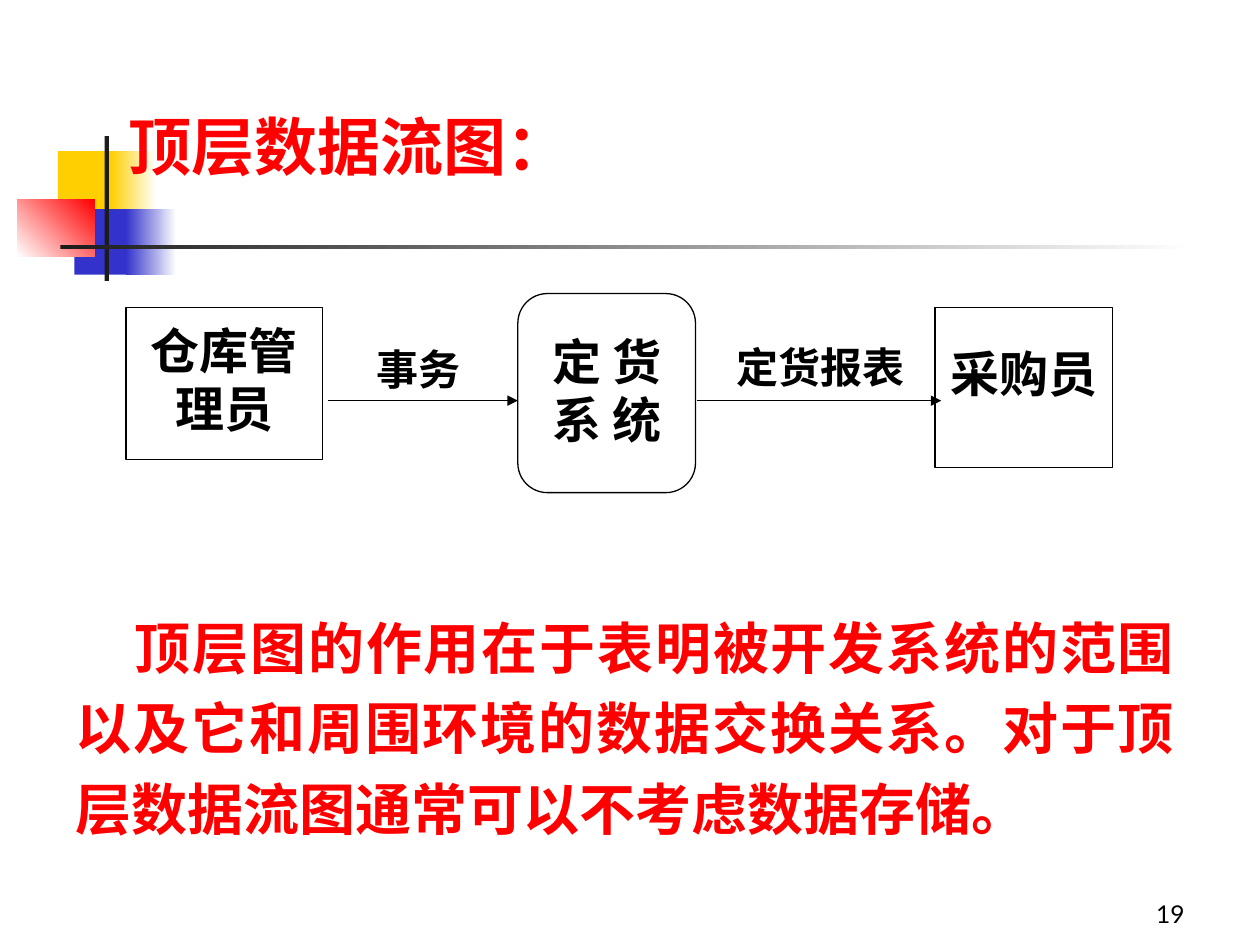
"""Build the top-level data flow diagram slide on a grid of 100 columns by 75 rows."""
from dataclasses import dataclass, field
from typing import Optional

import pptx
import pptx.dml.color
import pptx.enum.dml
import pptx.enum.shapes
import pptx.enum.text
import pptx.oxml.ns
import pptx.util
from lxml import etree

COLS, ROWS = 100, 75
COLORS = {
    "yellow": "FFCF01", "blue": "3333CC", "red": "FF0000",
    "dark": "1C1C1C", "black": "000000", "white": "FFFFFF",
}
CJK = "Noto Sans CJK SC"
ALIGN = pptx.enum.text.PP_ALIGN
ANCHOR = pptx.enum.text.MSO_ANCHOR
SHAPE = pptx.enum.shapes.MSO_SHAPE

prs = pptx.Presentation()
prs.slide_width = pptx.util.Inches(10)
prs.slide_height = pptx.util.Inches(7.5)
CELL = prs.slide_width / COLS


@dataclass(frozen=True)
class Area:
    col: float
    row: float
    cols: float
    rows: float

    def emu(self) -> list[int]:
        return [round(v * CELL) for v in (self.col, self.row, self.cols, self.rows)]


@dataclass(frozen=True)
class Block:
    area: Area
    start: str
    end: Optional[str] = None
    angle: float = 0


@dataclass(frozen=True)
class Node:
    area: Area
    text: str
    top: float
    shape: int = SHAPE.RECTANGLE


@dataclass(frozen=True)
class Label:
    area: Area
    text: str
    style: dict = field(default_factory=dict)


@dataclass(frozen=True)
class Flow:
    start: float
    end: float
    row: float


def rgb(name: str) -> pptx.dml.color.RGBColor:
    return pptx.dml.color.RGBColor.from_string(COLORS[name])


def write(sp, text: str, *, size: float = 24, color: str = "black", bold: bool = True,
          font: str = CJK, align=ALIGN.JUSTIFY, anchor=ANCHOR.TOP, top: float = 0.8,
          spacing: float = 1.2, indent: float = 0) -> None:
    tf = sp.text_frame
    tf.word_wrap = True
    tf.vertical_anchor = anchor
    tf.margin_top = round(top * CELL)
    p = tf.paragraphs[0]
    p.alignment = align
    p.line_spacing = pptx.util.Pt(round(size * spacing, 1))
    p._p.get_or_add_pPr().set("indent", str(round(indent * CELL)))
    r = p.add_run()
    r.text = text
    r.font.size = pptx.util.Pt(size)
    r.font.bold = bold
    r.font.name = font
    r.font.color.rgb = rgb(color)
    etree.SubElement(r._r.get_or_add_rPr(), pptx.oxml.ns.qn("a:ea"), typeface=font)


def draw_block(s, block: Block) -> None:
    sp = s.shapes.add_shape(SHAPE.RECTANGLE, *block.area.emu())
    sp.shadow.inherit = False
    sp.line.fill.background()
    if block.end is None:
        sp.fill.solid()
        sp.fill.fore_color.rgb = rgb(block.start)
        return
    sp.fill.gradient()
    sp.fill.gradient_angle = block.angle
    for stop, name, position in zip(sp.fill.gradient_stops, (block.start, block.end), (0, 1)):
        stop.color.rgb = rgb(name)
        stop.position = position


def draw_node(s, node: Node) -> None:
    sp = s.shapes.add_shape(node.shape, *node.area.emu())
    sp.shadow.inherit = False
    sp.fill.background()
    sp.line.color.rgb = rgb("black")
    sp.line.width = pptx.util.Pt(0.75)
    write(sp, node.text, size=28, align=ALIGN.CENTER, top=node.top)


def draw_label(s, label: Label) -> None:
    write(s.shapes.add_textbox(*label.area.emu()), label.text, **label.style)


def draw_flow(s, flow: Flow) -> None:
    ends = [round(v * CELL) for v in (flow.start, flow.row, flow.end, flow.row)]
    line = s.shapes.add_connector(pptx.enum.shapes.MSO_CONNECTOR.STRAIGHT, *ends)
    line.line.color.rgb = rgb("black")
    line.line.width = pptx.util.Pt(0.75)
    qn = pptx.oxml.ns.qn
    etree.SubElement(line.line._get_or_add_ln(), qn("a:tailEnd"), type="triangle")
    etree.SubElement(line._element.spPr, qn("a:effectLst"))


BLOCKS = [
    Block(Area(4.6, 12, 4.8, 5.2), "yellow"),
    Block(Area(8.8, 12, 3.6, 5.2), "yellow", "white"),
    Block(Area(5.9, 16.6, 4.6, 5.2), "blue"),
    Block(Area(10, 16.6, 4, 5.2), "blue", "white"),
    Block(Area(1.4, 15.8, 6.1, 4.6), "white", "red", 45),
    Block(Area(8.3, 10.8, 0.35, 11.5), "dark"),
    Block(Area(4.8, 19.45, 90, 0.35), "dark", "white"),
]
NODES = [
    Node(Area(41.1, 23.3, 14.1, 15.8), "定 货系 统", 2.3, SHAPE.FLOWCHART_ALTERNATE_PROCESS),
    Node(Area(10, 24.4, 15.6, 12.1), "仓库管理员", 1),
    Node(Area(74.2, 24.4, 14.1, 12.7), "采购员", 2.9),
]
FLOWS = [Flow(26, 41.1, 31.8), Flow(55.3, 74.7, 31.8)]
LABELS = [
    Label(Area(9.2, 7.5, 52.5, 7), "顶层数据流图：", dict(size=36, color="red", top=1)),
    Label(Area(56.2, 26.3, 17.9, 6.2), "定货报表", dict(align=ALIGN.CENTER)),
    Label(Area(28.9, 26.5, 12.7, 5.2), "事务"),
    Label(Area(5, 46.7, 89.2, 20.2),
          "顶层图的作用在于表明被开发系统的范围以及它和周围环境的数据交换关系。"
          "对于顶层数据流图通常可以不考虑数据存储。",
          dict(size=32, color="red", spacing=1.44, indent=4.7, top=0.9)),
    Label(Area(74.2, 69.2, 20.8, 5), "19",
          dict(size=14, bold=False, font="Lato", align=ALIGN.RIGHT, anchor=ANCHOR.BOTTOM)),
]


def main() -> None:
    s = prs.slides.add_slide(prs.slide_layouts[6])
    for draw, items in ((draw_block, BLOCKS), (draw_node, NODES),
                        (draw_flow, FLOWS), (draw_label, LABELS)):
        for item in items:
            draw(s, item)
    prs.save("out.pptx")


if __name__ == "__main__":
    main()
